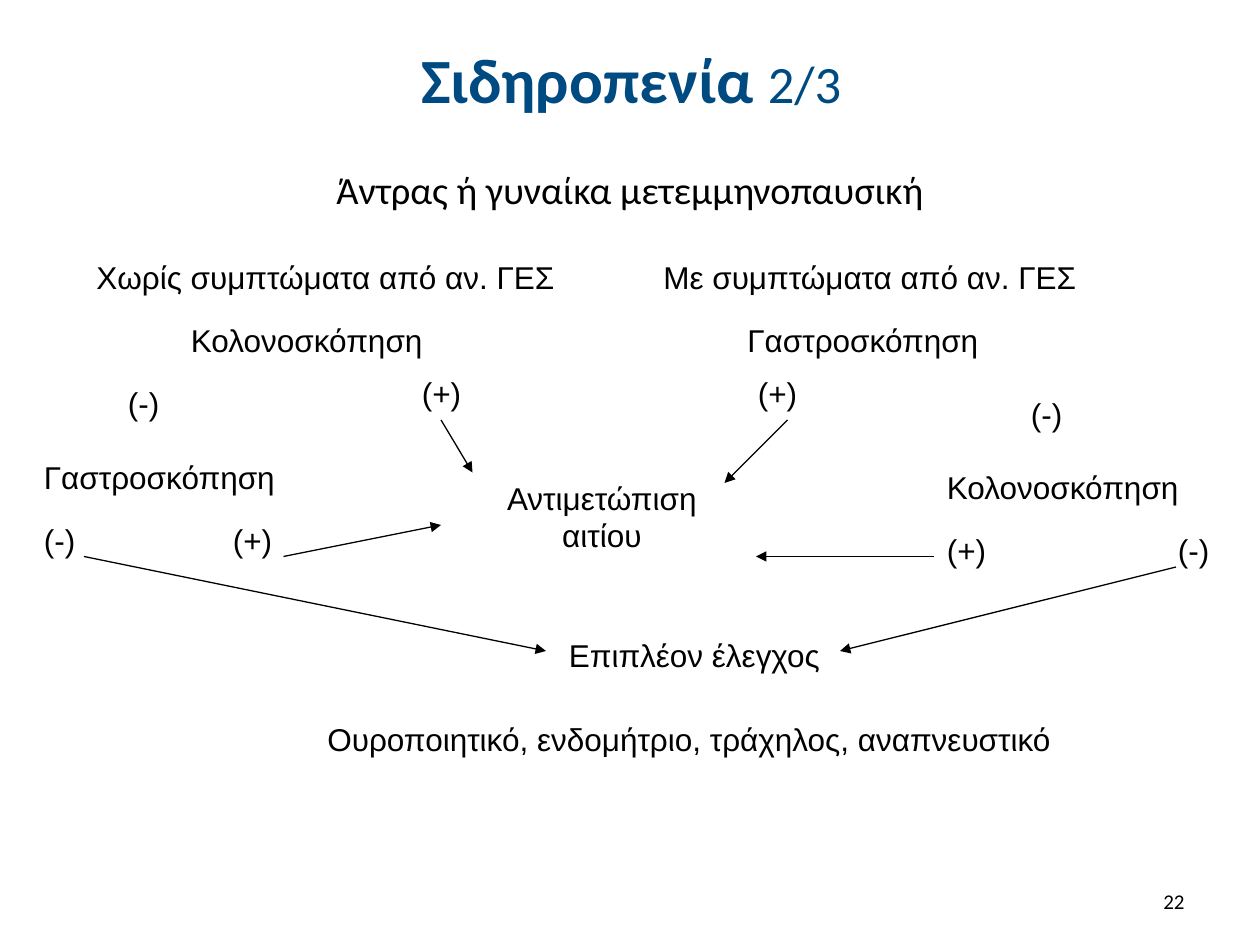
import pptx
import pptx.util
import pptx.dml.color
import pptx.enum.shapes
import pptx.enum.text
from lxml import etree
from pptx.oxml.ns import qn

THEME = {
    "title": pptx.dml.color.RGBColor(0x00, 0x4A, 0x82),
    "ink": pptx.dml.color.RGBColor(0, 0, 0),
    "head_font": "Calibri", "body_font": "Arial",
    "title_size": 36, "part_size": 30, "subtitle_size": 22,
    "body_size": 18, "number_size": 12, "line": 0.75,
}
ALIGN = pptx.enum.text.PP_ALIGN
ANCHOR = pptx.enum.text.MSO_ANCHOR

# Positions are columns and rows of a 120 x 90 grid over the slide.
COLS, ROWS = 120, 90
LABEL_HEIGHT = 0.4

TITLE, PART = "Σιδηροπενία ", "2/3"
SUBTITLE = "Άντρας ή γυναίκα μετεμμηνοπαυσική"
PAGE = "22"
CAUSE = ["Αντιμετώπιση", "αιτίου"]

# text: (width in inches, [(column, row), ...])
LABELS = {
    "Χωρίς συμπτώματα από αν. ΓΕΣ": (3.84, [(8, 24)]),
    "Με συμπτώματα από αν. ΓΕΣ": (3.48, [(62, 24)]),
    "Κολονοσκόπηση": (2.13, [(17, 30), (89, 44)]),
    "Γαστροσκόπηση": (2.11, [(70, 30), (3, 43)]),
    "(-)": (0.45, [(11, 36), (97, 37), (3, 49), (111, 50)]),
    "(+)": (0.51, [(39, 35), (71, 35), (21, 49), (89, 50)]),
    "Επιπλέον έλεγχος": (2.2, [(53, 60)]),
    "Ουροποιητικό, ενδομήτριο, τράχηλος, αναπνευστικό": (6.17, [(30, 68)]),
}
ARROWS = [  # start and end, column and row
    ((8, 53), (52, 62)),
    ((112, 54), (80, 62)),
    ((27, 53), (42, 50)),
    ((42, 40), (45, 45)),
    ((75, 40), (69, 46)),
    ((89, 53), (72, 53)),
]

prs = pptx.Presentation()
prs.slide_width, prs.slide_height = pptx.util.Inches(10), pptx.util.Inches(7.5)
s = prs.slides.add_slide(prs.slide_layouts.get_by_name("Title Only"))


def grid(col, row):
    return int(prs.slide_width * col / COLS), int(prs.slide_height * row / ROWS)


def style(font, size, name, color="ink", bold=False):
    font.size, font.name, font.bold = pptx.util.Pt(size), name, bold
    font.color.rgb = THEME[color]


def add_text(lines, x, y, width, height, size=THEME["body_size"],
             name=THEME["body_font"], align=ALIGN.LEFT, wrap=False):
    sp = s.shapes.add_textbox(x, y, pptx.util.Inches(width), pptx.util.Inches(height))
    tf = sp.text_frame
    tf.word_wrap = wrap
    tf.text = "\n".join(lines)
    for p in tf.paragraphs:
        p.alignment = align
        style(p.font, size, name)
    return tf


def add_arrow(start, end):
    line = s.shapes.add_connector(pptx.enum.shapes.MSO_CONNECTOR.STRAIGHT,
                                  *grid(*start), *grid(*end))
    line.line.color.rgb = THEME["ink"]
    line.line.width = pptx.util.Pt(THEME["line"])
    etree.SubElement(line.line._get_or_add_ln(), qn("a:tailEnd"), type="triangle")
    etree.SubElement(line._element.spPr, qn("a:effectLst"))


title = s.shapes.title
title.left, title.top = pptx.util.Inches(0.51), pptx.util.Inches(0.13)
title.width, title.height = pptx.util.Inches(9), pptx.util.Inches(0.99)
title.text_frame.vertical_anchor = ANCHOR.MIDDLE
p = title.text_frame.paragraphs[0]
p.alignment = ALIGN.CENTER
for text, size, bold in ((TITLE, THEME["title_size"], True),
                         (PART, THEME["part_size"], False)):
    r = p.add_run()
    r.text = text
    style(r.font, size, THEME["head_font"], "title", bold)

tf = add_text([SUBTITLE], pptx.util.Inches(0.5), pptx.util.Inches(1.31), 9, 0.55,
              THEME["subtitle_size"], THEME["head_font"], ALIGN.CENTER, True)
tf.paragraphs[0].line_spacing = 0.9
tf.paragraphs[0].space_before = pptx.util.Pt(12)

for text, (width, places) in LABELS.items():
    for place in places:
        add_text([text], *grid(*place), width, LABEL_HEIGHT)
add_text(CAUSE, *grid(47, 45), 1.72, 0.7, align=ALIGN.CENTER)

for start, end in ARROWS:
    add_arrow(start, end)

tf = add_text([PAGE], pptx.util.Inches(7.17), pptx.util.Inches(6.95), 2.33, 0.4,
              THEME["number_size"], THEME["head_font"], ALIGN.RIGHT, True)
tf.vertical_anchor = ANCHOR.MIDDLE

prs.save("out.pptx")
